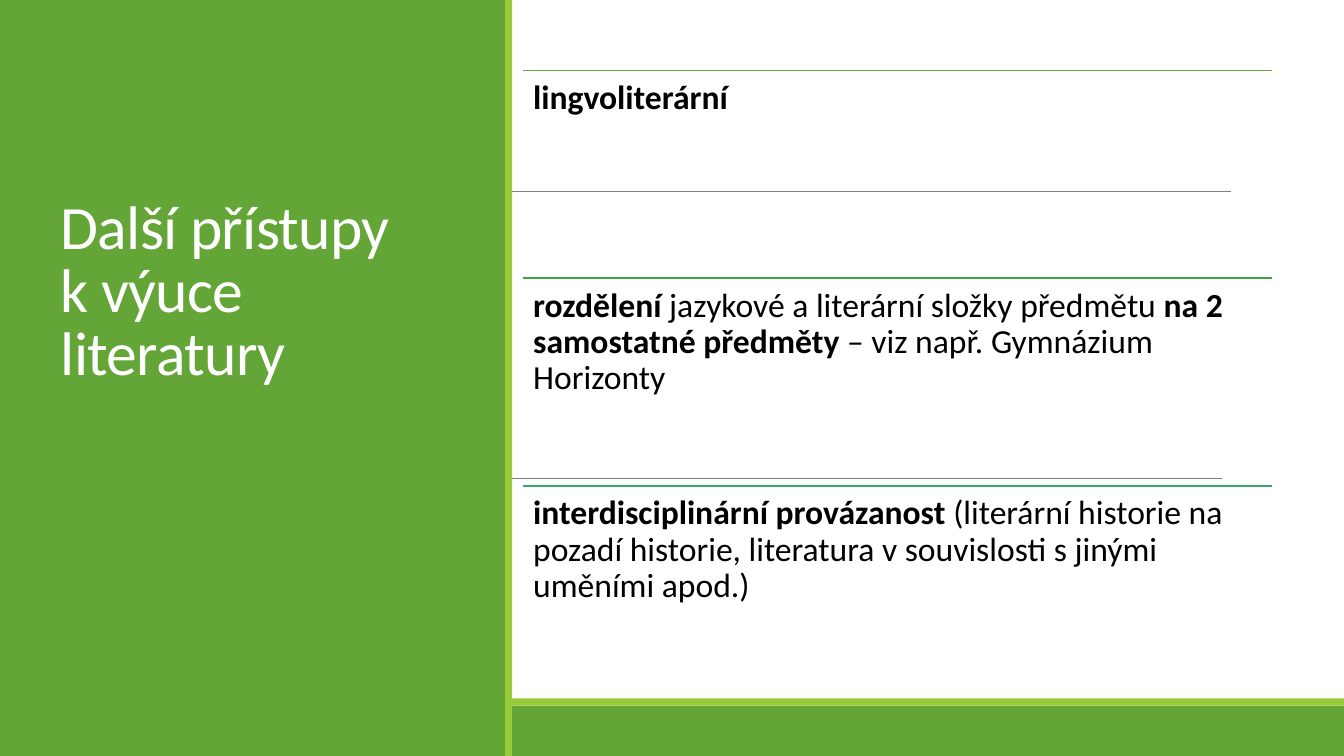
from dataclasses import dataclass

from lxml.etree import SubElement
from pptx import Presentation
from pptx.dml.color import RGBColor
from pptx.enum.shapes import MSO_CONNECTOR, MSO_SHAPE
from pptx.enum.text import MSO_ANCHOR, MSO_AUTO_SIZE, PP_ALIGN
from pptx.oxml.ns import qn
from pptx.util import Inches, Pt


@dataclass(frozen=True)
class Theme:
    font: str = "Calibri"
    green: str = "63A537"
    lime: str = "99CB38"
    gray: str = "808080"
    white: str = "FFFFFF"
    black: str = "000000"
    rules: tuple = ("63A537", "37A63D", "37A76F")
    head: int = 44
    body: int = 24


THEME = Theme()
WIDE, HIGH = 13.33, 7.5
SIDE, EDGE, FOOT = 5.01, 0.07, 0.5

TITLE = "Další přístupy\vk výuce literatury"
ITEMS = [
    [("lingvoliterární", True)],
    [
        ("rozdělení ", True),
        ("jazykové a literární složky předmětu ", False),
        ("na 2 samostatné předměty ", True),
        ("– viz např. Gymnázium Horizonty", False),
    ],
    [
        ("interdisciplinární provázanost ", True),
        ("(literární historie na pozadí historie, literatura "
         "v souvislosti s jinými uměními apod.)", False),
    ],
]


def color(code):
    return RGBColor.from_string(code)


def place(shape, box):
    shape.left, shape.top, shape.width, shape.height = map(Inches, box)


def block(slide, box, fill):
    shape = slide.shapes.add_shape(MSO_SHAPE.RECTANGLE, *map(Inches, box))
    shape.shadow.inherit = False
    shape.fill.solid()
    shape.fill.fore_color.rgb = color(fill)
    shape.line.fill.background()


def rule(slide, left, right, top, tint, width):
    line = slide.shapes.add_connector(
        MSO_CONNECTOR.STRAIGHT, *map(Inches, (left, top, right, top)))
    line.line.color.rgb = color(tint)
    line.line.width = Pt(width)
    SubElement(line._element.spPr, qn("a:effectLst"))


def write(shape, parts, size, tint, anchor=MSO_ANCHOR.TOP, space=0.9,
          inset=0.1, track=None):
    """Fill a shape with one paragraph of (text, bold) parts."""
    frame = shape.text_frame
    frame.word_wrap = True
    frame.auto_size = MSO_AUTO_SIZE.NONE
    frame.vertical_anchor = anchor
    frame.margin_left = frame.margin_right = Inches(0.1)
    frame.margin_top = frame.margin_bottom = Inches(inset)
    para = frame.paragraphs[0]
    para.alignment = PP_ALIGN.LEFT
    para.line_spacing = space
    for text, bold in parts:
        for index, piece in enumerate(text.split("\v")):
            if index:
                para.add_line_break()
            run = para.add_run()
            run.text = piece
            font = run.font
            font.name, font.size, font.bold = THEME.font, Pt(size), bold
            font.color.rgb = color(tint)
            if track is not None:
                run._r.get_or_add_rPr().set("spc", str(int(track * 100)))


def footer(slide, box):
    left, top, width, height = box
    block(slide, box, THEME.green)
    block(slide, (left, top - EDGE, width, EDGE), THEME.lime)


def panel(slide, box):
    left, top, width, height = box
    block(slide, box, THEME.green)
    block(slide, (left + width, top, EDGE, height), THEME.lime)
    title = slide.shapes.title
    place(title, (left + 0.1 * width, top + 0.7, 0.8 * width, 3.2))
    write(title, [(TITLE, False)], THEME.head, THEME.white,
          anchor=MSO_ANCHOR.BOTTOM, space=0.85, inset=0.05, track=-0.5)
    # Bring the title in front of the panel
    slide.shapes._spTree.append(title._element)


def topics(slide, box):
    left, top, width, height = box
    row = height / len(ITEMS)
    for index, (parts, tint) in enumerate(zip(ITEMS, THEME.rules)):
        y = top + index * row
        rule(slide, left, left + width, y, tint, 1.25)
        area = slide.shapes.add_textbox(*map(Inches, (left, y, width, row)))
        write(area, parts, THEME.body, THEME.black)


def main():
    deck = Presentation()
    deck.slide_width, deck.slide_height = Inches(WIDE), Inches(HIGH)
    slide = deck.slides.add_slide(deck.slide_layouts[5])
    rule(slide, 1.31, 12.21, 1.9, THEME.gray, 0.5)
    footer(slide, (0, HIGH - FOOT, WIDE, FOOT))
    rule(slide, 1.32, 12.12, 4.75, THEME.gray, 0.5)
    panel(slide, (0, 0, SIDE, HIGH))
    topics(slide, (5.19, 0.7, 7.43, 6.18))
    deck.save("out.pptx")


if __name__ == "__main__":
    main()
